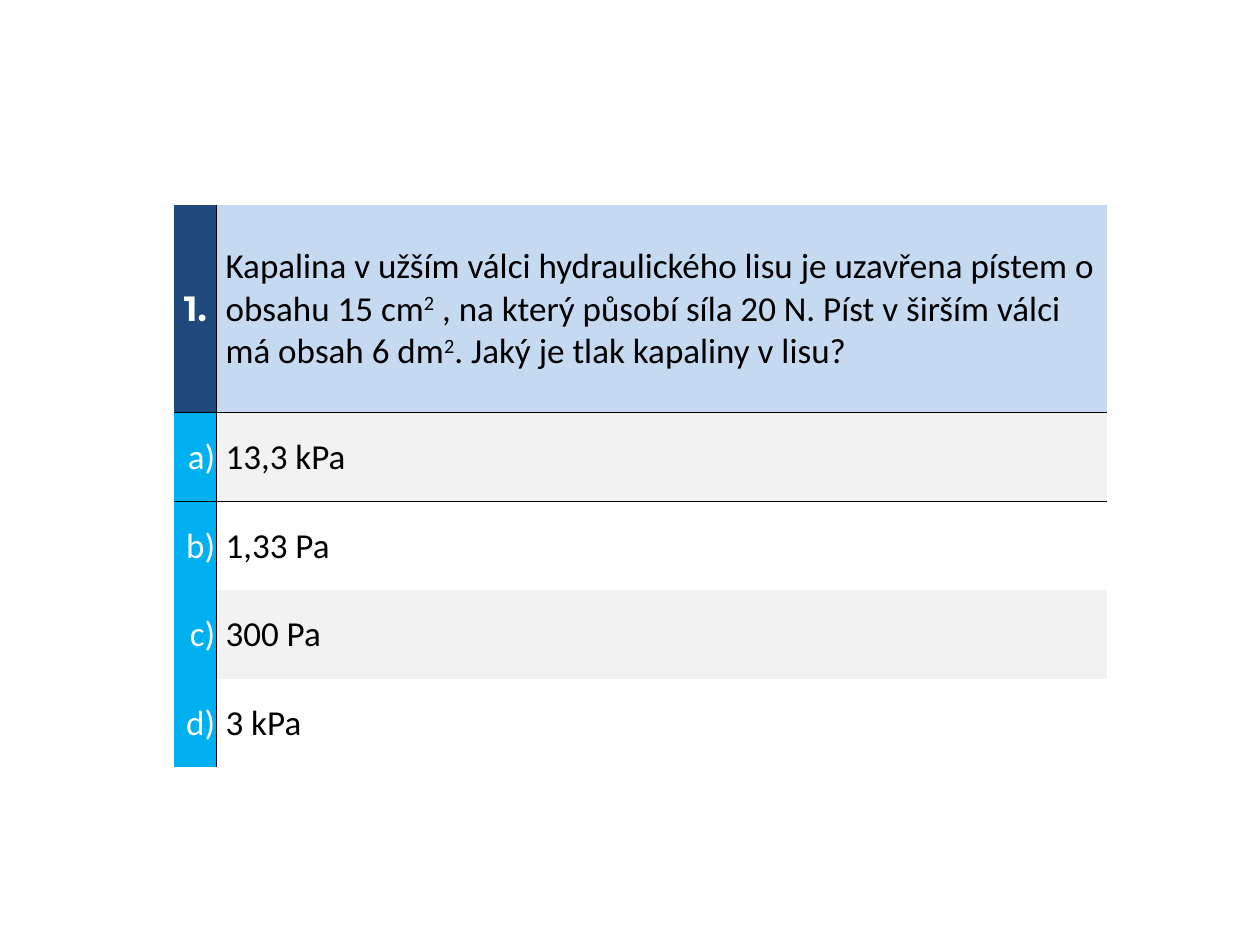
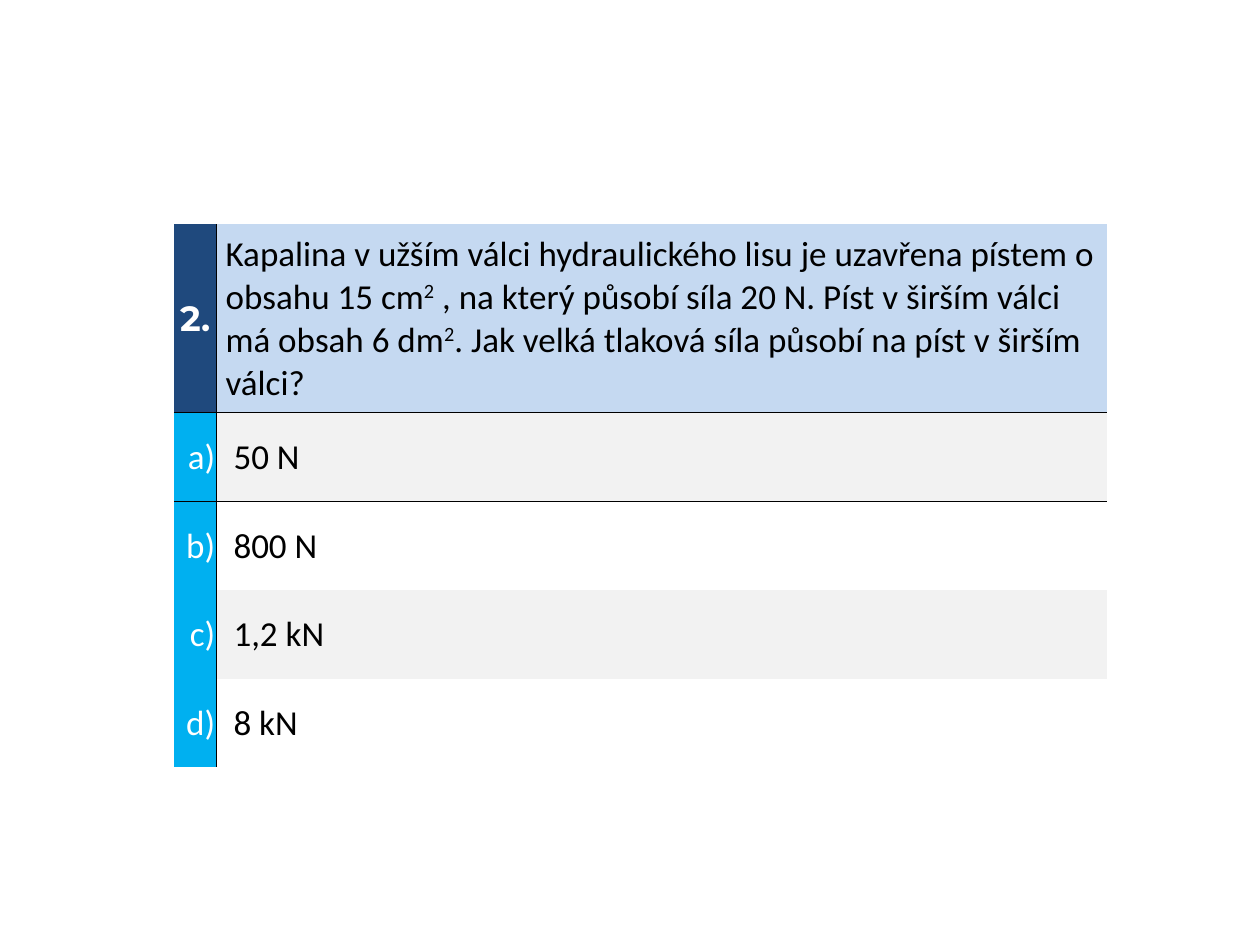
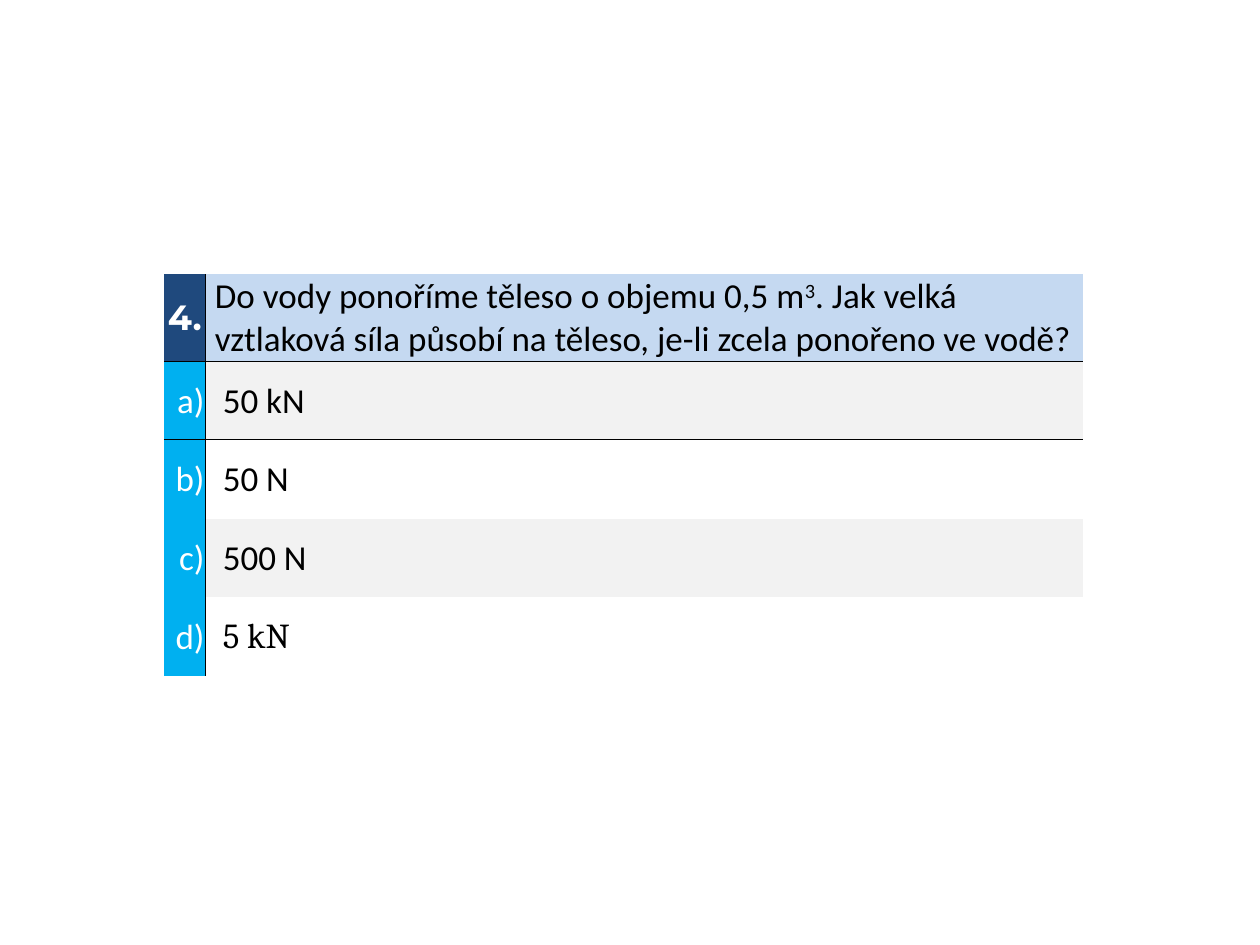
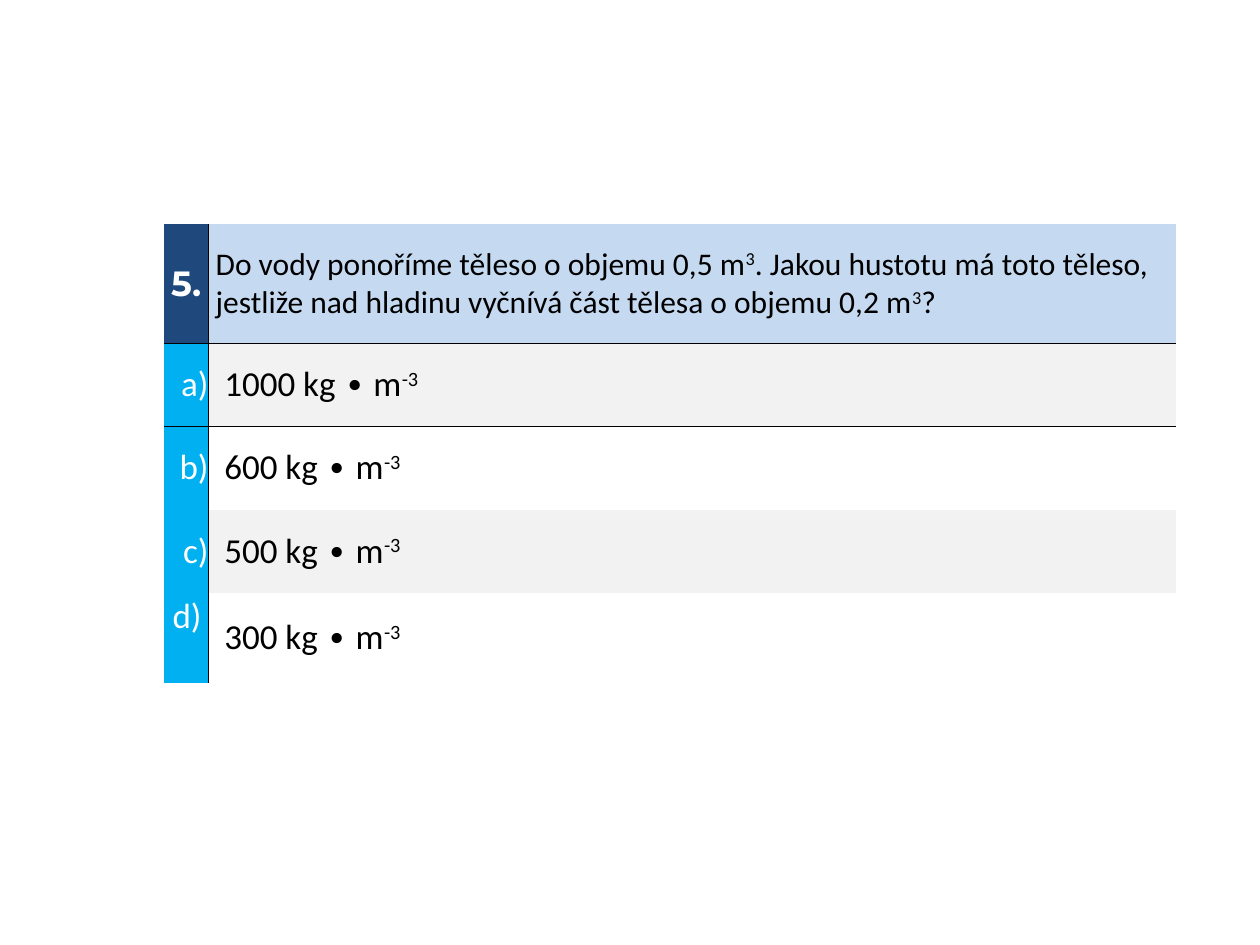
from lxml import etree
from pptx import Presentation
from pptx.dml.color import RGBColor
from pptx.enum.text import MSO_ANCHOR, PP_ALIGN
from pptx.oxml.ns import qn
from pptx.util import Pt

MIDDLE = MSO_ANCHOR.MIDDLE
LEFT, CENTER, RIGHT = PP_ALIGN.LEFT, PP_ALIGN.CENTER, PP_ALIGN.RIGHT

NAVY = RGBColor(0x1F, 0x49, 0x7D)
PALE_BLUE = RGBColor(0xC5, 0xD9, 0xF1)
CYAN = RGBColor(0x00, 0xB0, 0xF0)
GREY = RGBColor(0xF2, 0xF2, 0xF2)
WHITE = RGBColor(0xFF, 0xFF, 0xFF)
BLACK = RGBColor(0x00, 0x00, 0x00)

BODY_FONT, NUMBER_FONT = "Calibri", "Montserrat"
TEXT_SIZE = 20
SPACE_WIDTH = 0.226  # width of one space, in ems
BORDER_WIDTH = 0.5
PLAIN_STYLE = "{2D5ABB26-0587-4C30-8999-92F81FD0307C}"

# Content: ^...^ marks a superscript, lengths are in points
PRESS = ("Kapalina v užším válci hydraulického lisu je uzavřena pístem o\n"
         "obsahu 15 cm^2^ , na který působí síla 20 N. Píst v širším válci\n"
         "má obsah 6 dm^2^. ")
BODY = "Do vody ponoříme těleso o objemu 0,5 m^3^. "

QUESTIONS = [
    dict(number="1.", question=PRESS + "Jaký je tlak kapaliny v lisu?",
         answers=["13,3 kPa", "1,33 Pa", "300 Pa", "3 kPa"],
         at=(99.4, 116.9), columns=(24.3, 508.8),
         rows=[118.8] + [50.7] * 4, answer_spaces=1),
    dict(number="2.",
         question=PRESS + "Jak velká tlaková síla působí na píst v širším\nválci?",
         answers=["50 N", "800 N", "1,2 kN", "8 kN"],
         at=(99.4, 128), columns=(24.3, 508.8), rows=[107.7] + [50.7] * 4),
    dict(number="4.",
         question=BODY + "Jak velká\nvztlaková síla působí na těleso, "
                         "je-li zcela ponořeno ve vodě?",
         answers=["50 kN", "50 N", "500 N", "5 kN"],
         at=(93.6, 156.6), columns=(24, 501.1), rows=[45] * 5,
         last_font="Cambria"),
    dict(number="5.",
         question=BODY + "Jakou hustotu má toto těleso,\njestliže nad hladinu "
                         "vyčnívá část tělesa o objemu 0,2 m^3^?",
         answers=[f"{density} kg ∙ m^-3^" for density in (1000, 600, 500, 300)],
         at=(93.6, 128), columns=(25.6, 552.8),
         rows=[68] + [47.6] * 3 + [51.6], question_size=18, inset=0,
         last_letter_shift=(4, 24)),
]


def write_cell(cell, text, color, align=LEFT, size=TEXT_SIZE, font=BODY_FONT,
               bold=False, inset=0.72, spaces=0, shift=(0, 0)):
    """Fill a cell with text; shift adds to the right and bottom margins."""
    cell.vertical_anchor = MIDDLE
    cell.margin_left = Pt(round(inset + spaces * SPACE_WIDTH * size, 2))
    cell.margin_top = Pt(inset)
    cell.margin_right, cell.margin_bottom = Pt(inset + shift[0]), Pt(shift[1])
    paragraph = cell.text_frame.paragraphs[0]
    paragraph.alignment = align
    for part_index, part in enumerate(text.split("^")):
        for line_index, line in enumerate(part.split("\n")):
            if line_index:
                paragraph.add_line_break()
            if not line:
                continue
            run = paragraph.add_run()
            run.text = line
            run.font.name, run.font.size = font, Pt(size)
            run.font.bold, run.font.color.rgb = bold, color
            if part_index % 2:
                run.font._element.set("baseline", "30000")


def draw_borders(cell, sides):
    properties = cell._tc.get_or_add_tcPr()
    for side in sides:
        border = etree.SubElement(properties, qn(f"a:ln{side}"),
                                  w=str(Pt(BORDER_WIDTH)))
        fill = etree.SubElement(border, qn("a:solidFill"))
        etree.SubElement(fill, qn("a:srgbClr"), val=str(BLACK))


def paint(cell, color):
    if color is None:
        cell.fill.background()
    else:
        cell.fill.solid()
        cell.fill.fore_color.rgb = color


def add_question(slide, number, question, answers, at, columns, rows,
                 answer_spaces=2, question_size=TEXT_SIZE, inset=0.72,
                 last_font=BODY_FONT, last_letter_shift=(0, 0)):
    frame = slide.shapes.add_table(len(rows), 2, Pt(at[0]), Pt(at[1]),
                                   Pt(sum(columns)), Pt(sum(rows)))
    table = frame.table
    table.first_row = table.horz_banding = False
    table._tbl.tblPr.find(qn("a:tableStyleId")).text = PLAIN_STYLE
    for column, width in zip(table.columns, columns):
        column.width = Pt(width)
    for row, height in zip(table.rows, rows):
        row.height = Pt(height)

    # Question row
    write_cell(table.cell(0, 0), number, WHITE, CENTER, font=NUMBER_FONT,
               bold=True, inset=inset)
    write_cell(table.cell(0, 1), question, BLACK, size=question_size,
               inset=inset, spaces=1)

    # Answer rows
    for index, (letter, answer) in enumerate(zip("abcd", answers), 1):
        last = index == len(answers)
        write_cell(table.cell(index, 0), f"{letter})", WHITE, RIGHT, inset=inset,
                   shift=last_letter_shift if last else (0, 0))
        write_cell(table.cell(index, 1), answer, BLACK, inset=inset,
                   font=last_font if last else BODY_FONT, spaces=answer_spaces)

    # Borders and fills
    for index in range(len(rows)):
        rule = {0: "B", 1: "T"}.get(index, "")
        band = GREY if index % 2 else None
        fills = (CYAN, band) if index else (NAVY, PALE_BLUE)
        for column, side in enumerate("RL"):
            cell = table.cell(index, column)
            draw_borders(cell, side + rule)
            paint(cell, fills[column])


def main():
    deck = Presentation()
    deck.slide_width, deck.slide_height = Pt(720), Pt(540)
    blank = deck.slide_layouts[6]
    for content in QUESTIONS:
        add_question(deck.slides.add_slide(blank), **content)
    deck.save("out.pptx")


if __name__ == "__main__":
    main()
